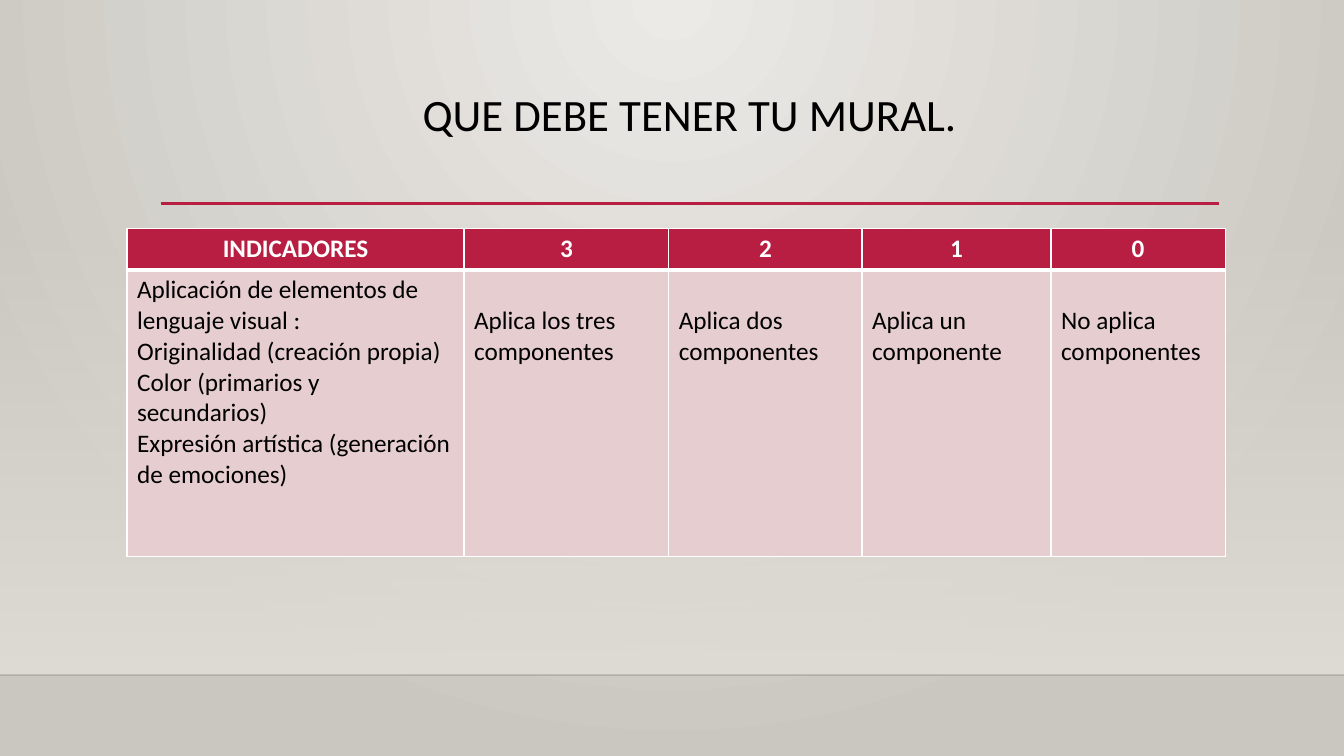
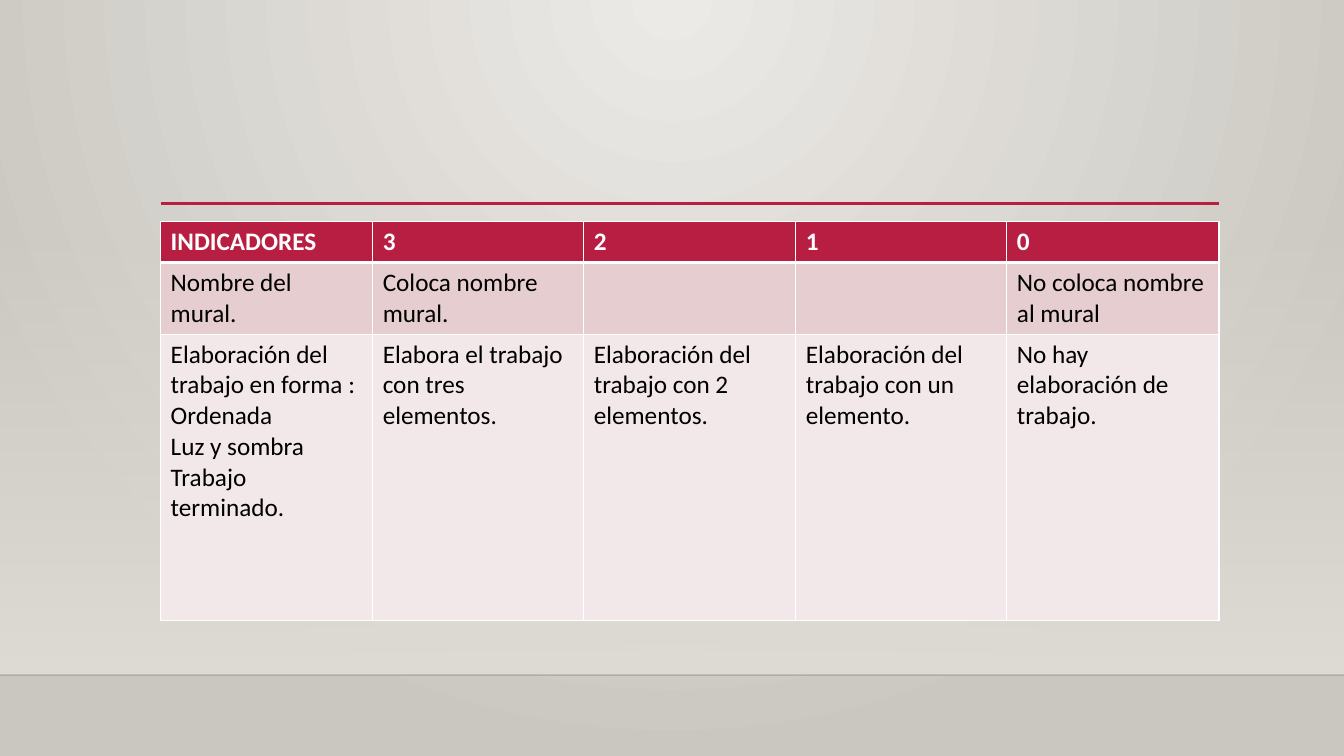
from collections import namedtuple

from pptx import Presentation
from pptx.dml.color import RGBColor
from pptx.enum.shapes import MSO_CONNECTOR as Connector, MSO_SHAPE as Shape
from pptx.enum.text import MSO_ANCHOR as Anchor, PP_ALIGN as Align
from pptx.oxml import parse_xml
from pptx.oxml.ns import nsdecls, qn
from pptx.util import Pt

PX = 9525  # EMU in one px, 96 px to the inch
PAGE_WIDTH, PAGE_HEIGHT = 1280, 720
LEFT, WIDTH = 153, 1008
TITLE_BOX = (LEFT, 84, WIDTH, 110)
TITLE_RULE_TOP = 194
BAND_TOP, FLOOR = 212, 643
CELL_MARGIN, TEXT_LINE = 5, 29
HEAD_HEIGHT, SHORT_HEIGHT, TALL_HEIGHT = 39, 68, 273
THIN, THICK = 1, 3  # cell borders in points

CRIMSON = RGBColor(0xB7, 0x1E, 0x42)
ROSE = RGBColor(0xE6, 0xCD, 0xCF)
PALE_ROSE = RGBColor(0xF3, 0xE8, 0xE9)
WHITE = RGBColor(0xFF, 0xFF, 0xFF)
BLACK = RGBColor(0x00, 0x00, 0x00)
INK = RGBColor(0x00, 0x00, 0x01)
LIGHT = RGBColor(0xEC, 0xEA, 0xE7)
STONE = RGBColor(0xCA, 0xC7, 0xC1)
SAND = RGBColor(0xDF, 0xDB, 0xD5)

TITLE_FONT = {"name": "Calibri", "size": Pt(32), "bold": False}
HEAD_FONT = {"name": "Calibri", "size": Pt(18), "bold": True}
BODY_FONT = {"name": "Calibri", "size": Pt(18), "bold": False}

RowStyle = namedtuple("RowStyle", "fill font color top bottom")
ROW_STYLES = [
    RowStyle(CRIMSON, HEAD_FONT, WHITE, THIN, THICK),
    RowStyle(ROSE, BODY_FONT, BLACK, THICK, THIN),
    RowStyle(PALE_ROSE, BODY_FONT, BLACK, THIN, THIN),
]

HEADS = ["INDICADORES", "3", "2", "1", "0"]
ELEMENT_ROWS = [
    HEADS,
    [
        "Aplicación de elementos de lenguaje visual :\n"
        "Originalidad (creación propia)\n"
        "Color (primarios y secundarios)\n"
        "Expresión artística (generación de emociones)",
        "Aplica los tres componentes",
        "Aplica dos componentes",
        "Aplica un componente",
        "No aplica componentes",
    ],
]
WORK_ROWS = [
    HEADS,
    ["Nombre del mural.", "Coloca nombre mural.", "", "", "No coloca nombre al mural"],
    [
        "Elaboración del trabajo en forma : Ordenada\nLuz y sombra\nTrabajo terminado.",
        "Elabora el trabajo con tres elementos.",
        "Elaboración del trabajo con 2 elementos.",
        "Elaboración del trabajo con un elemento.",
        "No hay elaboración de trabajo.",
    ],
]


def px(*lengths):
    """Turn px into EMU."""
    return [length * PX for length in lengths]


def split_evenly(total, count):
    """Split a length into whole px parts that add up to it exactly."""
    edges = [round(total * index / count) for index in range(count + 1)]
    return [end - start for start, end in zip(edges, edges[1:])]


def style_font(font, formats, color):
    for name, value in formats.items():
        setattr(font, name, value)
    font.color.rgb = color


def make_gradient(stops, direction):
    """Return a gradFill from (position, colour, alpha) stops, all in percent."""
    marks = "".join(
        f'<a:gs pos="{position * 1000}"><a:srgbClr val="{color}">'
        f'<a:alpha val="{alpha * 1000}"/></a:srgbClr></a:gs>'
        for position, color, alpha in stops)
    return parse_xml(f'<a:gradFill {nsdecls("a")} rotWithShape="1">'
                     f'<a:gsLst>{marks}</a:gsLst>{direction}</a:gradFill>')


def set_gradient(fill, owner, gradient):
    """Replace the fill inside the owner element by a gradient."""
    fill.solid()
    solid = owner.find(".//" + qn("a:solidFill"))
    solid.getparent().replace(solid, gradient)


def paint_background(master):
    gradient = make_gradient(
        [(0, LIGHT, 100), (100, STONE, 100)],
        '<a:path path="circle"><a:fillToRect l="43000" r="43000" b="100000"/></a:path>')
    fill = master.background.fill
    set_gradient(fill, master.element.find(".//" + qn("p:bg")), gradient)


def add_band(page, top, height):
    band = page.shapes.add_shape(Shape.RECTANGLE, *px(0, top, PAGE_WIDTH, height))
    band.shadow.inherit = False
    band.line.fill.background()
    gradient = make_gradient(
        [(0, SAND, 0), (100, SAND, 100)], '<a:lin ang="5400000" scaled="0"/>')
    set_gradient(band.fill, band.element.spPr, gradient)
    return band


def add_rule(page, left, top, width, color, points, alpha=100):
    rule = page.shapes.add_connector(
        Connector.STRAIGHT, *px(left, top, left + width, top))
    rule.line.color.rgb = color
    rule.line.width = Pt(points)
    rule.element.find(".//" + qn("a:srgbClr")).append(
        parse_xml(f'<a:alpha {nsdecls("a")} val="{alpha * 1000}"/>'))
    rule.element.spPr.append(parse_xml(f'<a:effectLst {nsdecls("a")}/>'))
    return rule


def dress_master(master, page):
    """Draw the shared backdrop with the page's tools, then move it to the master."""
    paint_background(master)
    backdrop = [
        add_band(page, BAND_TOP, FLOOR - BAND_TOP),
        add_rule(page, 0, FLOOR, PAGE_WIDTH, INK, 1, alpha=20),
        add_rule(page, LEFT, TITLE_RULE_TOP, WIDTH, CRIMSON, 2.5),
    ]
    for part in backdrop:
        master.shapes.element.append(part.element)


def place_title(page, text, box):
    title = page.shapes.title
    title.left, title.top, title.width, title.height = px(*box)
    frame = title.text_frame
    frame.text = text
    frame.vertical_anchor = Anchor.TOP
    para = frame.paragraphs[0]
    para.alignment = Align.CENTER
    para.line_spacing = 0.9
    style_font(para.font, TITLE_FONT, BLACK)


def border_cell(cell, top, bottom):
    """Give a cell white borders; top and bottom are widths in points."""
    widths = {"lnL": THIN, "lnR": THIN, "lnT": top, "lnB": bottom}
    properties = cell._tc.get_or_add_tcPr()
    for index, (side, points) in enumerate(widths.items()):
        properties.insert(index, parse_xml(
            f'<a:{side} {nsdecls("a")} w="{Pt(points)}"><a:solidFill>'
            f'<a:srgbClr val="{WHITE}"/></a:solidFill></a:{side}>'))


def fill_cell(cell, text, style):
    cell.text = text
    cell.fill.solid()
    cell.fill.fore_color.rgb = style.fill
    border_cell(cell, style.top, style.bottom)
    for para in cell.text_frame.paragraphs:
        style_font(para.font, style.font, style.color)


def place_rubric(page, left, top, widths, heights, rows):
    """Place a scoring table and return it."""
    table = page.shapes.add_table(
        len(heights), len(widths), *px(left, top, sum(widths), sum(heights))).table
    for column, width in zip(table.columns, px(*widths)):
        column.width = width
    for row, height, texts, style in zip(table.rows, px(*heights), rows, ROW_STYLES):
        row.height = height
        for cell, text in zip(row.cells, texts):
            fill_cell(cell, text, style)
    return table


def build_elements_page(page):
    place_title(page, "QUE DEBE TENER TU MURAL.", TITLE_BOX)
    table = place_rubric(page, 121, 218, [321, 195, 184, 180, 166],
                         [HEAD_HEIGHT, TALL_HEIGHT], ELEMENT_ROWS)
    head_cells, body_cells = [list(row.cells) for row in table.rows]
    for cell in head_cells:
        cell.text_frame.paragraphs[0].alignment = Align.CENTER
    for score_cell in body_cells[1:]:
        score_cell.margin_top = (CELL_MARGIN + TEXT_LINE) * PX


def build_work_page(page):
    place_rubric(page, LEFT, 211, split_evenly(WIDTH, len(HEADS)),
                 [HEAD_HEIGHT, SHORT_HEIGHT, TALL_HEIGHT], WORK_ROWS)


def main():
    deck = Presentation()
    deck.slide_width, deck.slide_height = px(PAGE_WIDTH, PAGE_HEIGHT)
    title_only, blank = deck.slide_layouts[5], deck.slide_layouts[6]
    elements_page = deck.slides.add_slide(title_only)
    work_page = deck.slides.add_slide(blank)
    dress_master(deck.slide_master, elements_page)
    build_elements_page(elements_page)
    build_work_page(work_page)
    deck.save("out.pptx")


if __name__ == "__main__":
    main()
